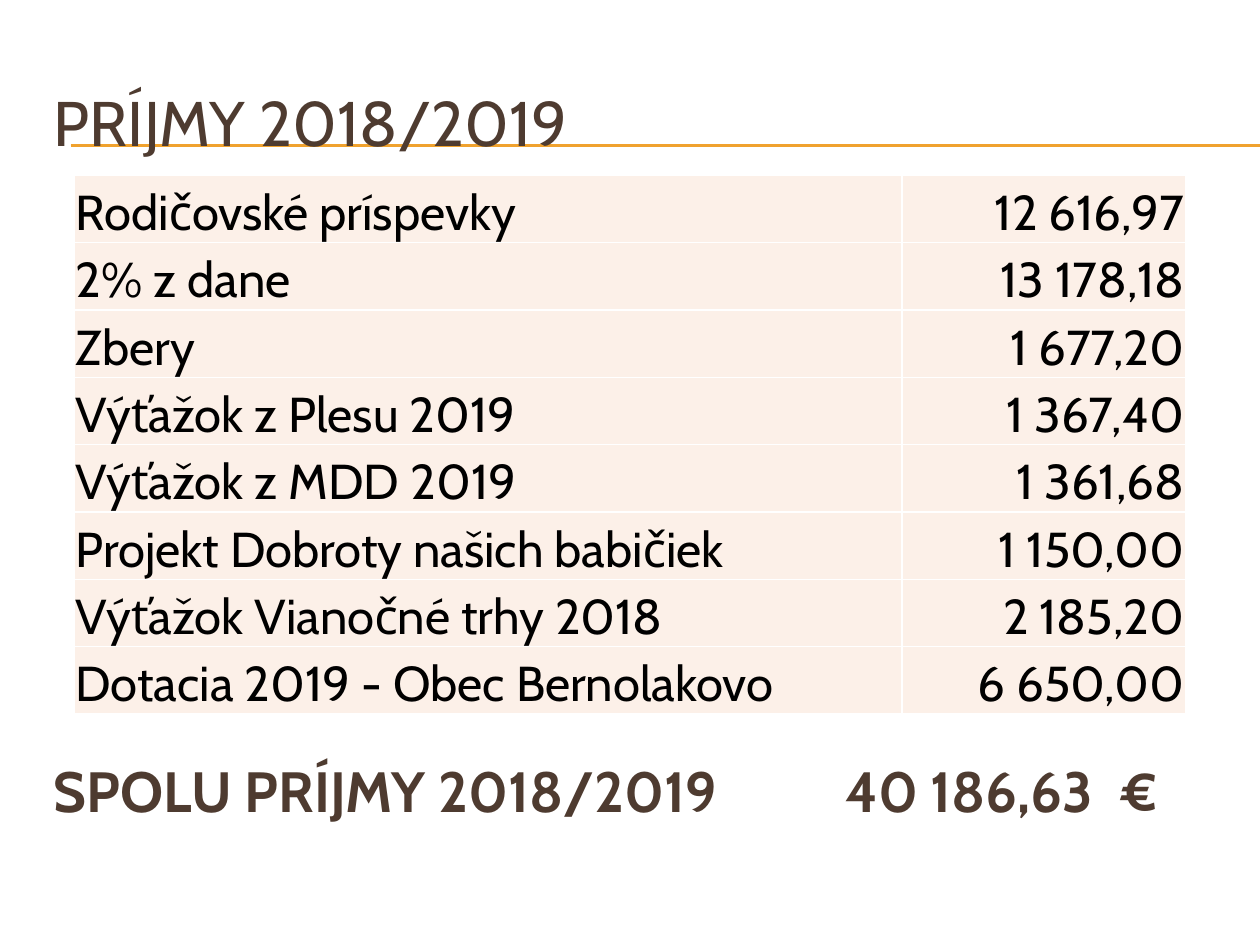
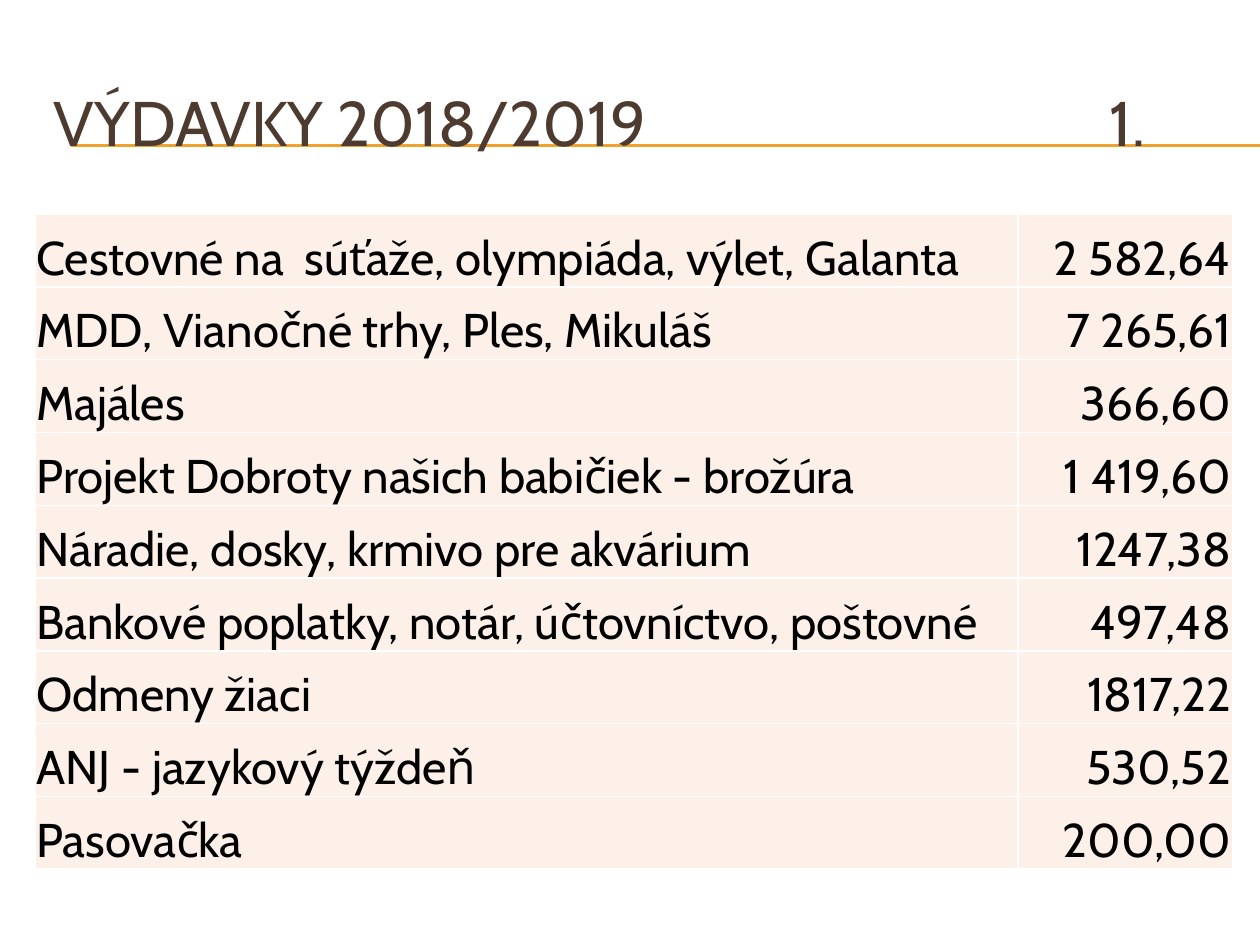
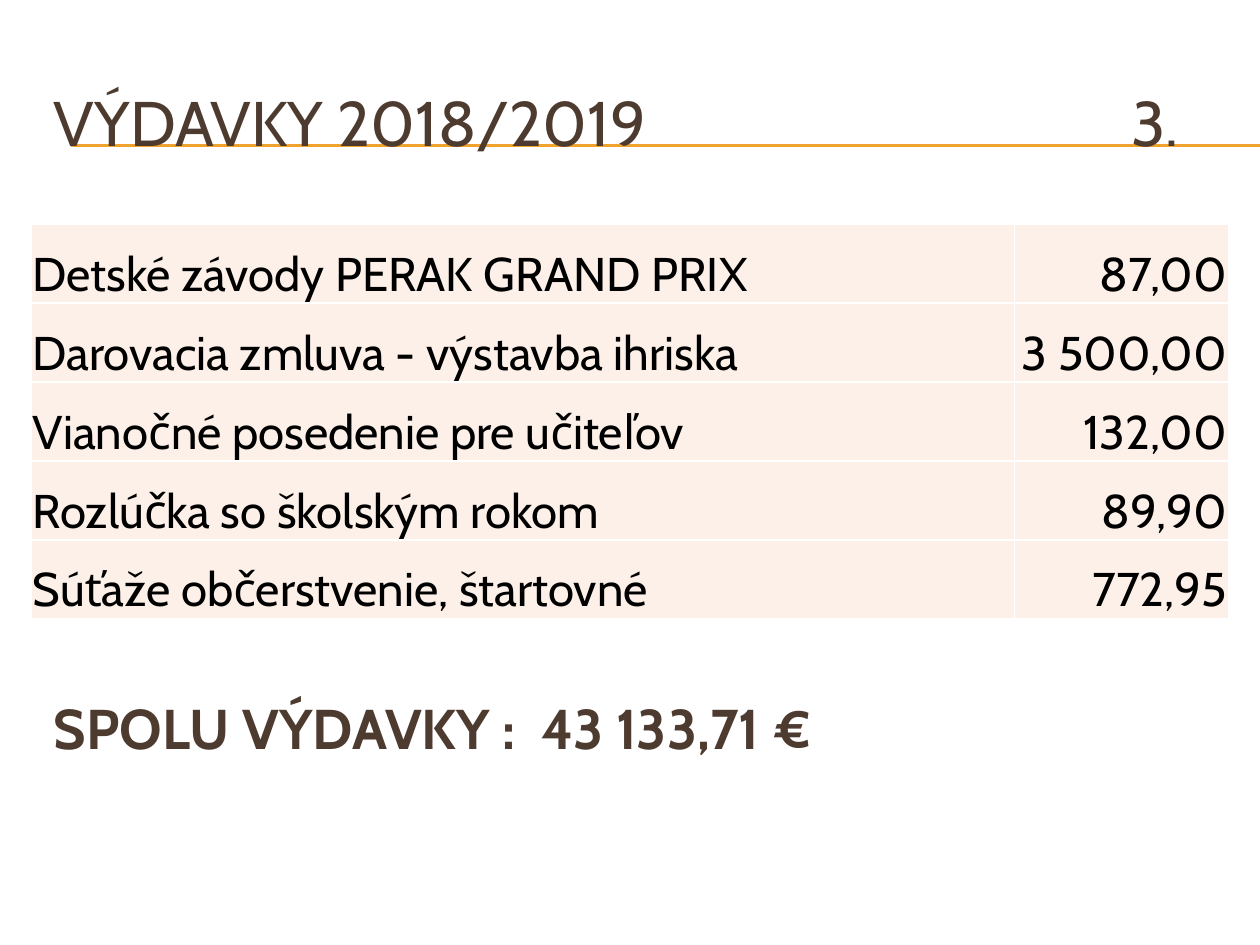
"""Build the school parents' association income and expense slides."""
from lxml.etree import SubElement
from pptx import Presentation
from pptx.dml.color import RGBColor
from pptx.enum.shapes import MSO_CONNECTOR
from pptx.enum.text import MSO_ANCHOR as Anchor, PP_ALIGN as Align
from pptx.oxml.ns import qn
from pptx.util import Inches, Pt

FONT = "Cabin"
BROWN, GOLD, CREAM, BLACK, WHITE = "4E3B30", "F0A22E", "FCF0E8", "000000", "FFFFFF"
RULE_LEFT, RULE_HEIGHTS = 0.56, (1.15, 1.16)
TEXT_LEFT, TEXT_WIDTH = 0.33, 9.5
TITLE_TOP, TITLE_HEIGHT, TOTAL_HEIGHT = 0.5, 0.92, 0.7

SLIDES = [
    {
        "title": {"parts": ["PRÍJMY 2018/2019"]},
        "table": {"left": 0.59, "top": 1.39, "height": 4.28, "columns": (6.57, 2.25), "size": 28},
        "rows": [
            ("Rodičovské príspevky", "12 616,97"),
            ("2% z dane", "13 178,18"),
            ("Zbery", "1 677,20"),
            ("Výťažok z Plesu 2019", "1 367,40"),
            ("Výťažok z MDD 2019", "1 361,68"),
            ("Projekt Dobroty našich babičiek", "1 150,00"),
            ("Výťažok Vianočné trhy 2018", "2 185,20"),
            ("Dotacia 2019 - Obec Bernolakovo", "6 650,00"),
        ],
        "total": {"parts": ["SPOLU PRÍJMY 2018/2019", "40 186,63  €"],
                  "tab": 6.28, "top": 5.92, "size": 32.4},
    },
    {
        "title": {"parts": ["VÝDAVKY 2018/2019", "1."], "tab": 8.38},
        "table": {"left": 0.28, "top": 1.7, "height": 5.2, "columns": (7.8, 1.7), "size": 27},
        "rows": [
            ("Cestovné na  súťaže, olympiáda, výlet, Galanta", "2 582,64"),
            ("MDD, Vianočné trhy, Ples, Mikuláš", "7 265,61"),
            ("Majáles", "366,60"),
            ("Projekt Dobroty našich babičiek - brožúra", "1 419,60"),
            ("Náradie, dosky, krmivo pre akvárium", "1247,38"),
            ("Bankové poplatky, notár, účtovníctvo, poštovné", "497,48"),
            ("Odmeny žiaci", "1817,22"),
            ("ANJ - jazykový týždeň", "530,52"),
            ("Pasovačka", "200,00"),
        ],
    },
    {
        "title": {"parts": ["VÝDAVKY 2018/2019", "3."], "tab": 8.55},
        "table": {"left": 0.25, "top": 1.78, "height": 3.13, "columns": (7.8, 1.7), "size": 27},
        "rows": [
            ("Detské závody PERAK GRAND PRIX", "87,00"),
            ("Darovacia zmluva - výstavba ihriska", "3 500,00"),
            ("Vianočné posedenie pre učiteľov", "132,00"),
            ("Rozlúčka so školským rokom", "89,90"),
            ("Súťaže občerstvenie, štartovné", "772,95"),
        ],
        "total": {"parts": ["SPOLU VÝDAVKY :  43 133,71 €"], "top": 5.42, "size": 32},
    },
]


def color(value):
    """Turn a hex string into a colour."""
    return RGBColor.from_string(value)


def write(paragraph, text, size, fill=BROWN, bold=False, align=Align.LEFT):
    """Put one formatted run into a paragraph."""
    paragraph.alignment = align
    run = paragraph.add_run()
    run.text = text
    run.font.name, run.font.size, run.font.bold = FONT, Pt(size), bold
    run.font.color.rgb = color(fill)


def add_heading(slide, parts, top, height, size, tab=None, bold=False):
    """Add a line of text whose parts are set apart by a tab stop."""
    box = slide.shapes.add_textbox(Inches(TEXT_LEFT), Inches(top),
                                   Inches(TEXT_WIDTH), Inches(height))
    frame = box.text_frame
    frame.word_wrap = True
    frame.vertical_anchor = Anchor.MIDDLE
    paragraph = frame.paragraphs[0]
    write(paragraph, "\t".join(parts), size, bold=bold)
    if tab:
        stops = SubElement(paragraph._p.get_or_add_pPr(), qn("a:tabLst"))
        SubElement(stops, qn("a:tab"), pos=str(Inches(tab)), algn="l")


def add_rules(slide, right):
    """Draw the double gold rule under the title."""
    for height in RULE_HEIGHTS:
        rule = slide.shapes.add_connector(MSO_CONNECTOR.STRAIGHT, Inches(RULE_LEFT),
                                          Inches(height), right, Inches(height))
        rule.line.color.rgb = color(GOLD)
        rule.line.width = Pt(0.75)
        SubElement(rule._element.spPr, qn("a:effectLst"))


def style_cell(cell):
    """Give a cell its borders, fill, margins and anchor."""
    properties = cell._tc.get_or_add_tcPr()
    for side in ("a:lnL", "a:lnR", "a:lnT", "a:lnB"):
        line = SubElement(properties, qn(side), w=str(Pt(1)))
        SubElement(SubElement(line, qn("a:solidFill")), qn("a:srgbClr"), val=WHITE)
    cell.fill.solid()
    cell.fill.fore_color.rgb = color(CREAM)
    cell.margin_left = cell.margin_right = cell.margin_top = Inches(0.01)
    cell.margin_bottom = 0
    cell.vertical_anchor = Anchor.BOTTOM


def add_amounts(slide, rows, left, top, height, columns, size):
    """Add the table of items and their amounts."""
    table = slide.shapes.add_table(len(rows), len(columns), Inches(left), Inches(top),
                                   Inches(sum(columns)), Inches(height)).table
    table.first_row = table.horz_banding = False
    for column, width in zip(table.columns, columns):
        column.width = Inches(width)
    for row, texts in zip(table.rows, rows):
        for cell, text, align in zip(row.cells, texts, (Align.LEFT, Align.RIGHT)):
            style_cell(cell)
            write(cell.text_frame.paragraphs[0], text, size, fill=BLACK, align=align)


def main():
    """Build all slides and save the presentation."""
    presentation = Presentation()
    presentation.slide_width, presentation.slide_height = Inches(10), Inches(7.5)
    for content in SLIDES:
        slide = presentation.slides.add_slide(presentation.slide_layouts[6])
        add_rules(slide, presentation.slide_width)
        add_heading(slide, top=TITLE_TOP, height=TITLE_HEIGHT, size=36, **content["title"])
        if "total" in content:
            add_heading(slide, height=TOTAL_HEIGHT, bold=True, **content["total"])
        add_amounts(slide, content["rows"], **content["table"])
    presentation.save("out.pptx")


if __name__ == "__main__":
    main()
